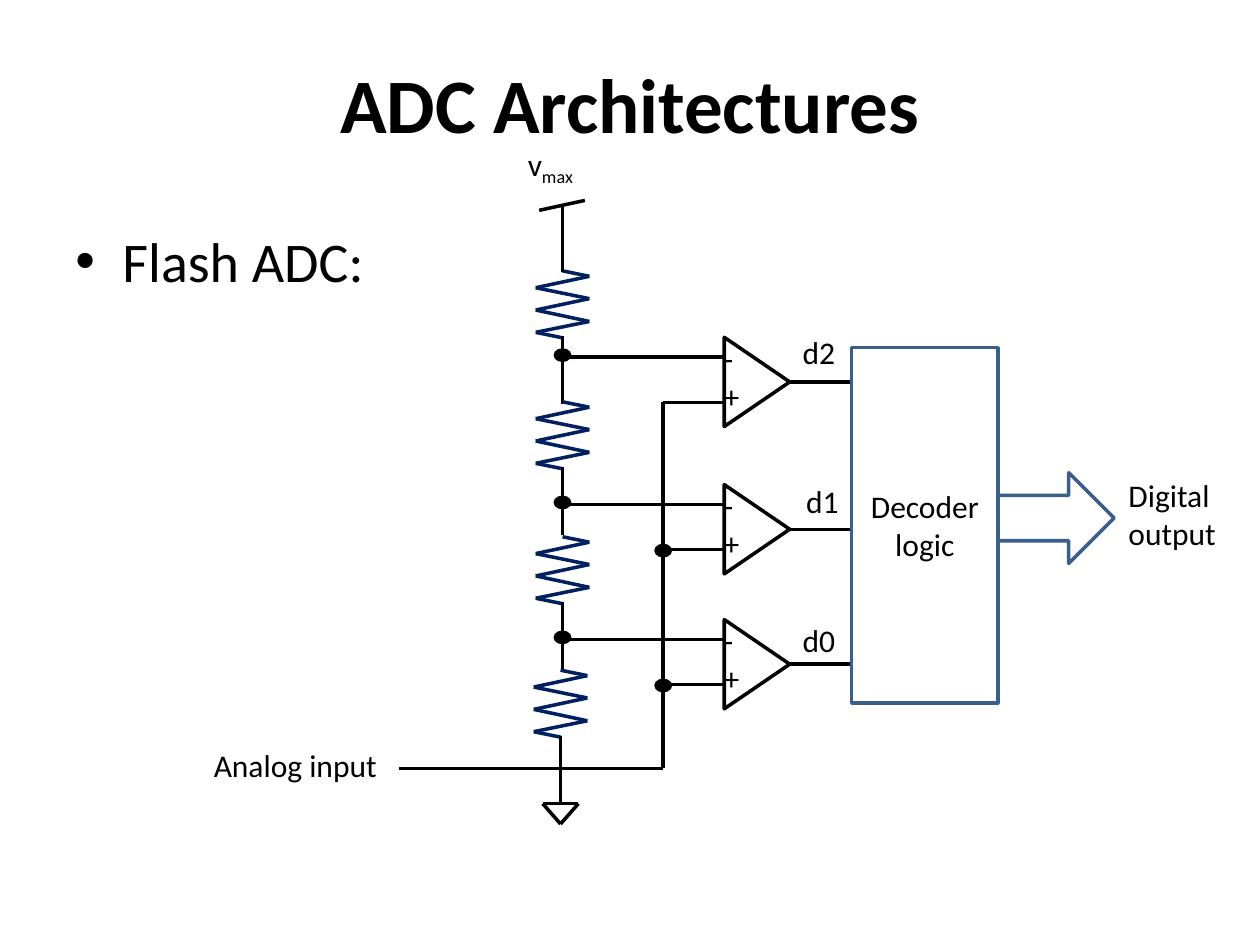
from dataclasses import dataclass
from itertools import pairwise
from lxml.etree import SubElement
from pptx import Presentation
from pptx.dml.color import RGBColor as Rgb
from pptx.enum.shapes import MSO_CONNECTOR as Conn, MSO_SHAPE as Kind
from pptx.enum.text import MSO_ANCHOR as Anchor, PP_ALIGN as Align
from pptx.oxml.ns import qn
from pptx.util import Cm, Pt


@dataclass(frozen=True)
class Theme:
    font: str = "Calibri"
    ink: Rgb = Rgb(0, 0, 0)
    navy: Rgb = Rgb(0x00, 0x20, 0x60)
    blue: Rgb = Rgb(0x3A, 0x5F, 0x8C)
    title: int = 44
    body: int = 32
    label: int = 18
    line: int = 2


LOOK = Theme()
RAIL = 11.34
BUS = 13.37
GATE = 14.59
TIP = 15.93
BLOCK = 17.17
ZIGZAG = [(0, 0), (0.54, 0.11), (-0.54, 0.34), (0.54, 0.56),
          (-0.54, 0.79), (0.54, 1.02), (-0.54, 1.24), (0, 1.35)]


def add_run(para, text, size, bold=False, drop=0):
    run = para.add_run()
    run.text = text
    run.font.name = LOOK.font
    run.font.size = Pt(size)
    run.font.bold = bold
    run.font.color.rgb = LOOK.ink
    if drop:
        run._r.get_or_add_rPr().set("baseline", str(-drop * 1000))


def add_wire(parts, start, end, color=LOOK.ink):
    wire = parts.add_connector(Conn.STRAIGHT, *map(Cm, start + end))
    wire.line.color.rgb = color
    wire.line.width = Pt(LOOK.line)
    SubElement(wire._element.spPr, qn("a:effectLst"))


def add_form(parts, kind, box, color):
    form = parts.add_shape(kind, *map(Cm, box))
    form.shadow.inherit = False
    form.fill.background()
    form.line.color.rgb = color
    form.line.width = Pt(LOOK.line)
    return form


def add_label(parts, box, text, size=LOOK.label):
    frame = parts.add_textbox(*map(Cm, box)).text_frame
    frame.word_wrap = True
    para = frame.paragraphs[0]
    add_run(para, text, size)
    return frame, para


def add_dot(parts, x, y):
    wide, high = 0.36, 0.28
    dot = add_form(parts, Kind.OVAL, (x - wide / 2, y - high / 2, wide, high), LOOK.ink)
    dot.fill.solid()
    dot.fill.fore_color.rgb = LOOK.ink
    dot.line.fill.background()


def add_coil(slide, x, y):
    parts = slide.shapes.add_group_shape().shapes
    points = [(x + dx, y + dy) for dx, dy in ZIGZAG]
    for start, end in pairwise(points):
        add_wire(parts, start, end, LOOK.navy)
    add_wire(parts, (x, y + 1.32), (x, y + 2.69))


def add_gate(slide, y):
    parts = slide.shapes.add_group_shape().shapes
    wide, high = 1.8, 1.32
    mid = (GATE + TIP) / 2
    gate = add_form(parts, Kind.ISOSCELES_TRIANGLE,
                    (mid - wide / 2, y - high / 2, wide, high), LOOK.ink)
    gate.rotation = 90
    frame, _ = add_label(parts, (GATE, y - 0.99, 0.32, wide), "-")
    frame.margin_left = frame.margin_right = 0
    add_run(frame.add_paragraph(), "+", LOOK.label)
    add_wire(parts, (GATE, y - 0.5), (RAIL, y - 0.5))
    add_wire(parts, (GATE, y + 0.41), (BUS, y + 0.41))
    add_wire(parts, (BLOCK, y), (TIP, y))
    add_dot(slide.shapes, RAIL, y - 0.54)


def add_ground(slide, x, y):
    parts = slide.shapes.add_group_shape().shapes
    left, right, foot = (x - 0.36, y), (x + 0.36, y), (x, y + 0.41)
    for start, end in pairwise([left, right, foot, left]):
        add_wire(parts, start, end)


def add_title(slide, text):
    title = slide.shapes.title
    title.left, title.top, title.width, title.height = map(Cm, (1.27, 0.76, 22.86, 2.62))
    frame = title.text_frame
    frame.vertical_anchor = Anchor.MIDDLE
    para = frame.paragraphs[0]
    para.alignment = Align.CENTER
    add_run(para, text, LOOK.title, bold=True)


def add_bullet(slide, text):
    _, para = add_label(slide.shapes, (1.27, 4.45, 22.86, 12.57), text, LOOK.body)
    props = para._p.get_or_add_pPr()
    props.set("marL", str(Cm(0.95)))
    props.set("indent", str(Cm(-0.95)))
    SubElement(props, qn("a:buFont")).set("typeface", "Arial")
    SubElement(props, qn("a:buChar")).set("char", "•")


def add_block(slide):
    parts = slide.shapes
    block = add_form(parts, Kind.RECTANGLE, (BLOCK, 7.01, 2.95, 7.16), LOOK.blue)
    frame = block.text_frame
    frame.word_wrap = True
    frame.vertical_anchor = Anchor.MIDDLE
    para = frame.paragraphs[0]
    para.alignment = Align.CENTER
    add_run(para, "Decoder logic", LOOK.label)
    add_form(parts, Kind.RIGHT_ARROW, (20.12, 9.53, 2.34, 1.83), LOOK.blue)


def main():
    deck = Presentation()
    deck.slide_width, deck.slide_height = Cm(25.4), Cm(19.05)
    slide = deck.slides.add_slide(deck.slide_layouts[5])
    parts = slide.shapes
    add_title(slide, "ADC Architectures")
    add_bullet(slide, "Flash ADC:")

    for x, y in [(RAIL, 5.46), (RAIL, 8.1), (RAIL, 10.82), (11.3, 13.51)]:
        add_coil(slide, x, y)
    add_ground(slide, 11.3, 16.2)
    add_wire(parts, (RAIL, 4.11), (RAIL, 5.48))
    add_wire(parts, (11.79, 4.04), (10.87, 4.24))

    gates = [7.7, 10.67, 13.39]
    for y in gates:
        add_gate(slide, y)
    for y in gates[1:]:
        add_dot(parts, BUS, y + 0.43)
    add_wire(parts, (BUS, gates[0] + 0.41), (BUS, 15.49))
    add_wire(parts, (BUS, 15.49), (8.05, 15.49))
    add_block(slide)

    for box, text in [((22.5, 9.47, 2.74, 1.8), "Digital output"),
                      ((4.06, 14.91, 4.29, 1.02), "Analog input"),
                      ((15.93, 12.4, 1.42, 1.02), "d0"),
                      ((16, 9.6, 1.42, 1.02), "d1"),
                      ((15.93, 6.58, 1.42, 1.02), "d2")]:
        add_label(parts, box, text)
    _, para = add_label(parts, (10.39, 2.79, 1.88, 1.02), "v")
    add_run(para, "max", LOOK.label, drop=25)
    deck.save("out.pptx")


if __name__ == "__main__":
    main()
